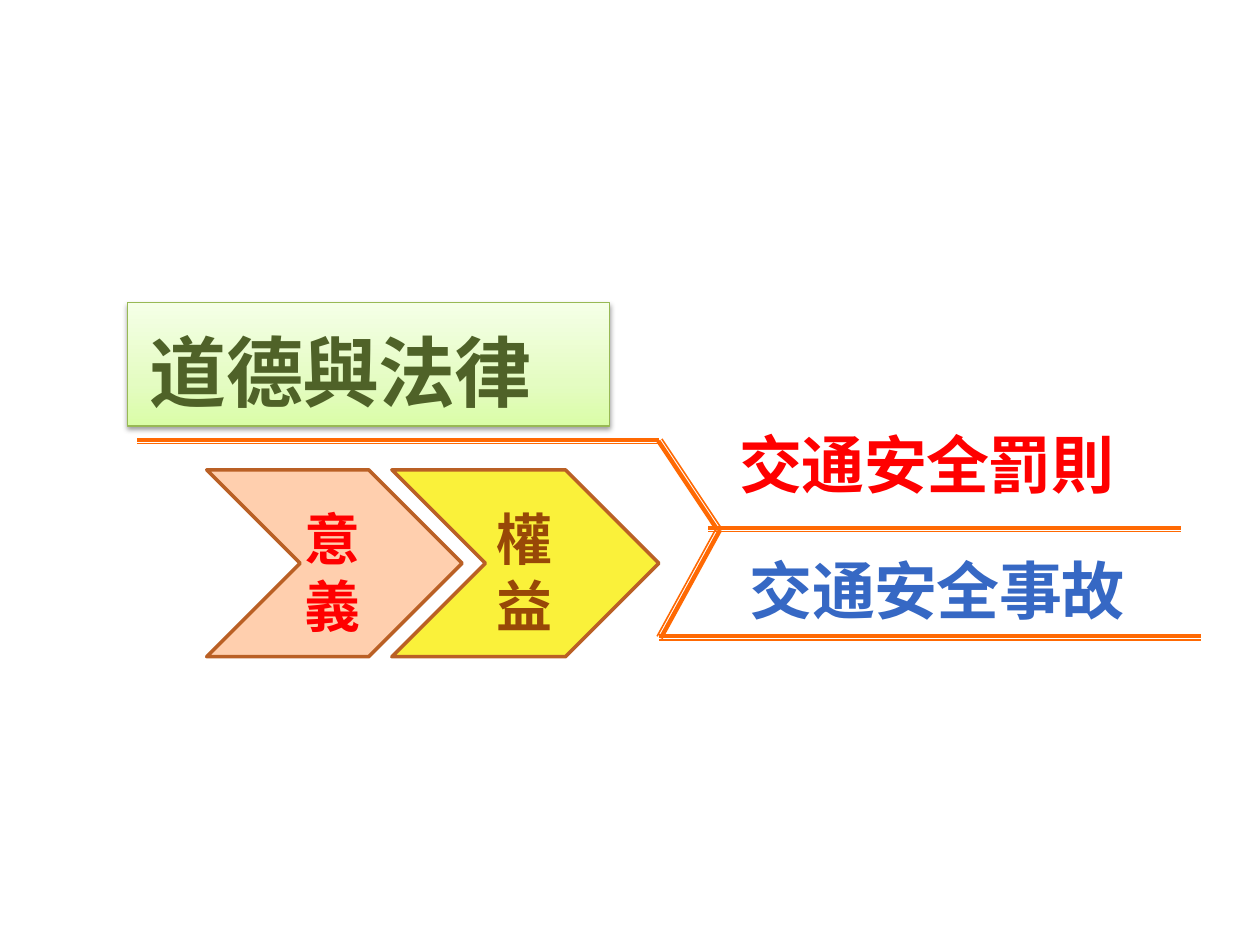
"""Build the slide on morality, law and traffic safety."""
from copy import deepcopy

from lxml import etree
from pptx import Presentation
from pptx.dml.color import RGBColor
from pptx.enum import shapes, text
from pptx.oxml import parse_xml
from pptx.oxml.ns import nsdecls, qn
from pptx.util import Pt


def color(value):
    return RGBColor.from_string(value)


def add_text(content, left, top, width, height, *, size, fill, font="Noto Sans CJK SC",
             spacing=0, anchor=text.MSO_ANCHOR.TOP):
    frame = slide.shapes.add_textbox(Pt(left), Pt(top), Pt(width), Pt(height)).text_frame
    frame.word_wrap = True
    frame.vertical_anchor = anchor
    frame.margin_left = frame.margin_right = frame.margin_top = frame.margin_bottom = 0
    run = frame.paragraphs[0].add_run()
    run.text = content
    run.font.name = font
    run.font.size = Pt(size)
    run.font.bold = True
    run.font.color.rgb = color(fill)
    properties = run._r.get_or_add_rPr()
    properties.set("spc", str(spacing))
    etree.SubElement(properties, qn("a:ea"), typeface=font)


presentation = Presentation()
presentation.slide_width = Pt(720)
presentation.slide_height = Pt(540)
slide = presentation.slides.add_slide(presentation.slide_layouts[6])

panel = slide.shapes.add_shape(shapes.MSO_SHAPE.RECTANGLE, Pt(72.7), Pt(172.8), Pt(275.8), Pt(70.6))
panel.fill.gradient()
panel.fill.gradient_angle = 90
first_stop = panel.fill.gradient_stops[0]._gs
first_stop.addnext(deepcopy(first_stop))
panel_stops = [(0, "DAFDA7"), (0.35, "E4FCC2"), (1, "F5FFE7")]
for stop, (position, value) in zip(panel.fill.gradient_stops, panel_stops):
    stop.position = position
    stop.color.rgb = color(value)
panel.line.color.rgb = color("98B955")
panel.line.width = Pt(0.75)
panel._element.spPr.append(parse_xml(
    f'<a:effectLst {nsdecls("a")}><a:outerShdw blurRad="{Pt(3.1)}" dist="{Pt(1.6)}" dir="5400000" '
    'rotWithShape="0"><a:srgbClr val="000000"><a:alpha val="38000"/></a:srgbClr>'
    '</a:outerShdw></a:effectLst>'))
add_text("道德與法律", 85.7, 185, 252, 53.3, size=44, fill="4F6228", spacing=-50,
         anchor=text.MSO_ANCHOR.MIDDLE)

chevrons = [
    ("意 義", 118.1, 146, "FFCFAE", 174.2, "FF0000"),
    ("權 益", 223.9, 152.6, "FAF13A", 283.7, "984807"),
]
for label, left, width, fill, text_left, text_color in chevrons:
    chevron = slide.shapes.add_shape(shapes.MSO_SHAPE.CHEVRON, Pt(left), Pt(268.5), Pt(width), Pt(106.8))
    chevron.adjustments[0] = 0.5
    chevron.shadow.inherit = False
    chevron.fill.solid()
    chevron.fill.fore_color.rgb = color(fill)
    chevron.line.color.rgb = color("BA6025")
    chevron.line.width = Pt(2)
    add_text(label, text_left, 288, 33.8, 77.8, size=32, fill=text_color)

backing = slide.shapes.add_shape(shapes.MSO_SHAPE.RECTANGLE, Pt(416.2), Pt(234.7), Pt(236.2), Pt(51.1))
backing.shadow.inherit = False
backing.fill.solid()
backing.fill.fore_color.rgb = color("FFFFFF")
backing.line.fill.background()
add_text("交通安全罰則", 422.6, 243.4, 218.2, 38.2, size=36, fill="FF0000",
         font="Noto Sans CJK TC", spacing=-40)

double_lines = [
    (78.5, 251.3, 376.6, 251.3, 0, 2.1),
    (376.2, 252, 410, 302.8, 2, -1.2),
    (404.6, 301.7, 674.6, 301.7, 0, 2.1),
    (411.5, 302.8, 377.6, 364.7, -2.1, -1.1),
    (376.6, 363.6, 686.2, 363.6, 0, 2.1),
]
for start_x, start_y, end_x, end_y, shift_x, shift_y in double_lines:
    for step, width in enumerate((2.5, 0.9)):
        dx, dy = step * shift_x, step * shift_y
        connector = slide.shapes.add_connector(
            shapes.MSO_CONNECTOR.STRAIGHT,
            Pt(start_x + dx), Pt(start_y + dy), Pt(end_x + dx), Pt(end_y + dy))
        connector.line.color.rgb = color("FF6903")
        connector.line.width = Pt(width)
        etree.SubElement(connector._element.spPr, qn("a:effectLst"))

add_text("交通安全事故", 428.4, 315.4, 218.2, 38.2, size=36, fill="3668C4",
         font="Noto Sans CJK TC", spacing=-35)

presentation.save("out.pptx")
